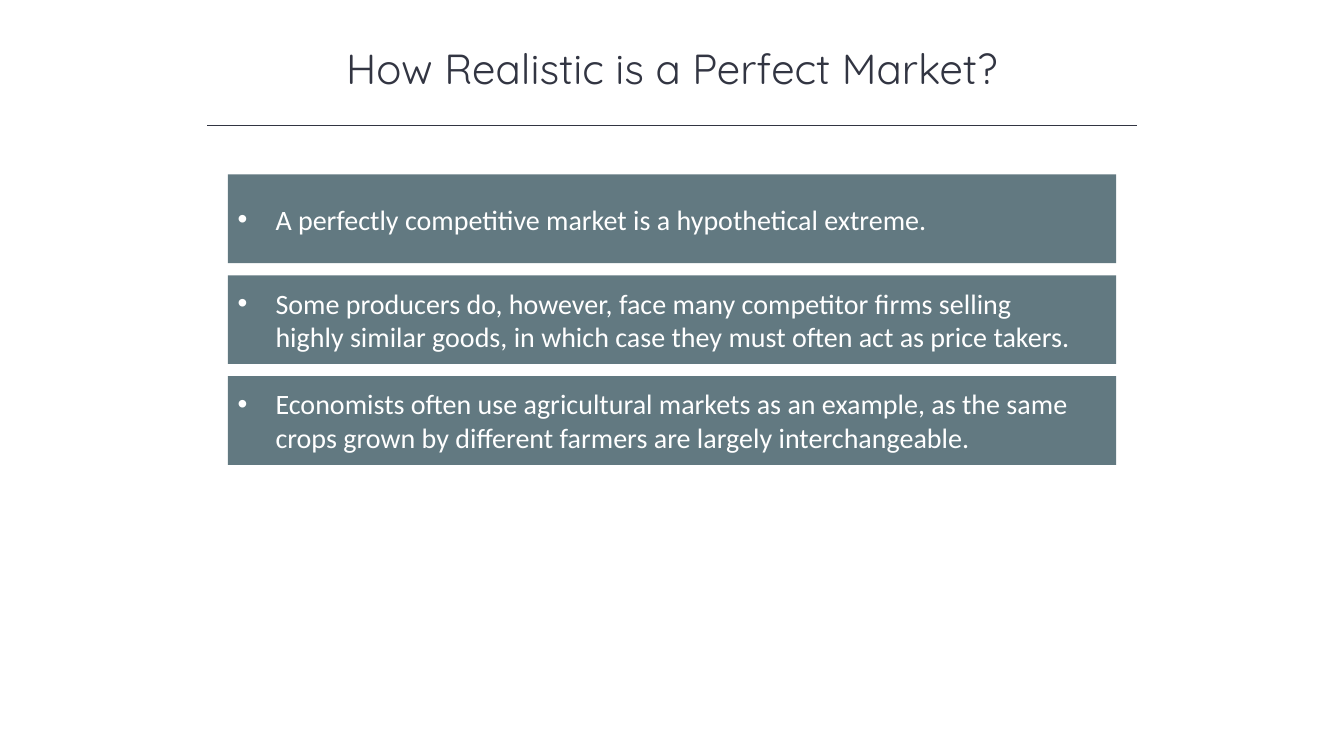
from lxml.etree import SubElement
from pptx import Presentation
from pptx.dml.color import RGBColor
from pptx.enum.shapes import MSO_CONNECTOR, MSO_SHAPE
from pptx.enum.text import MSO_ANCHOR, MSO_AUTO_SIZE, PP_ALIGN
from pptx.oxml.ns import qn
from pptx.util import Pt

# Content
TITLE = "How Realistic is a Perfect Market?"
POINTS = [
    "A perfectly competitive market is a hypothetical extreme.",
    "Some producers do, however, face many competitor firms selling "
    "highly similar goods, in which case they must often act as price takers.",
    "Economists often use agricultural markets as an example, as the same "
    "crops grown by different farmers are largely interchangeable.",
]
COLORS = {"ink": "323542", "bar": "627981", "text": "FFFFFF"}

# Layout in points
WIDE, HIGH = 960, 540
RULE_W, RULE_Y = 664, 89.5
BAR_W, BAR_H, BAR_TOP, STEP = 634.5, 63.4, 124.6, 72
INDENT, INSET, END = 27, 7.2, 26.6


def color(name):
    return RGBColor.from_string(COLORS[name])


def style(para, font, size, name):
    para.font.name = font
    para.font.size = Pt(size)
    para.font.color.rgb = color(name)


def bullet(para):
    props = para._p.get_or_add_pPr()
    props.set("marL", str(Pt(INDENT)))
    props.set("indent", str(-Pt(INDENT)))
    SubElement(props, qn("a:buFont")).set("typeface", "Arial")
    SubElement(props, qn("a:buChar")).set("char", "•")


def add_bar(slide, text, top):
    bar = slide.shapes.add_shape(
        MSO_SHAPE.RECTANGLE, Pt((WIDE - BAR_W) / 2), Pt(top), Pt(BAR_W), Pt(BAR_H))
    bar.shadow.inherit = False
    bar.fill.solid()
    bar.fill.fore_color.rgb = color("bar")
    bar.line.fill.background()
    frame = bar.text_frame
    frame.word_wrap = True
    frame.vertical_anchor = MSO_ANCHOR.MIDDLE
    frame.margin_left, frame.margin_right = Pt(INSET), Pt(END)
    para = frame.paragraphs[0]
    para.text = text
    para.alignment = PP_ALIGN.LEFT
    bullet(para)
    style(para, "Calibri", 20, "text")


def main():
    deck = Presentation()
    deck.slide_width, deck.slide_height = Pt(WIDE), Pt(HIGH)
    slide = deck.slides.add_slide(deck.slide_layouts[5])

    # Title
    title = slide.shapes.title
    title.left, title.top, title.width, title.height = Pt(120), Pt(26.6), Pt(720), Pt(44)
    frame = title.text_frame
    frame.text = TITLE
    frame.word_wrap = True
    frame.auto_size = MSO_AUTO_SIZE.NONE
    frame.vertical_anchor = MSO_ANCHOR.MIDDLE
    frame.paragraphs[0].alignment = PP_ALIGN.CENTER
    style(frame.paragraphs[0], "Quicksand", 30, "ink")

    # Rule under the title
    left = (WIDE - RULE_W) / 2
    rule = slide.shapes.add_connector(
        MSO_CONNECTOR.STRAIGHT, Pt(left), Pt(RULE_Y), Pt(left + RULE_W), Pt(RULE_Y))
    rule.line.color.rgb = color("ink")
    rule.line.width = Pt(1)
    SubElement(rule._element.spPr, qn("a:effectLst"))

    # Bars, one for each point
    for row, text in enumerate(POINTS):
        add_bar(slide, text, BAR_TOP + row * STEP)

    deck.save("out.pptx")


if __name__ == "__main__":
    main()
